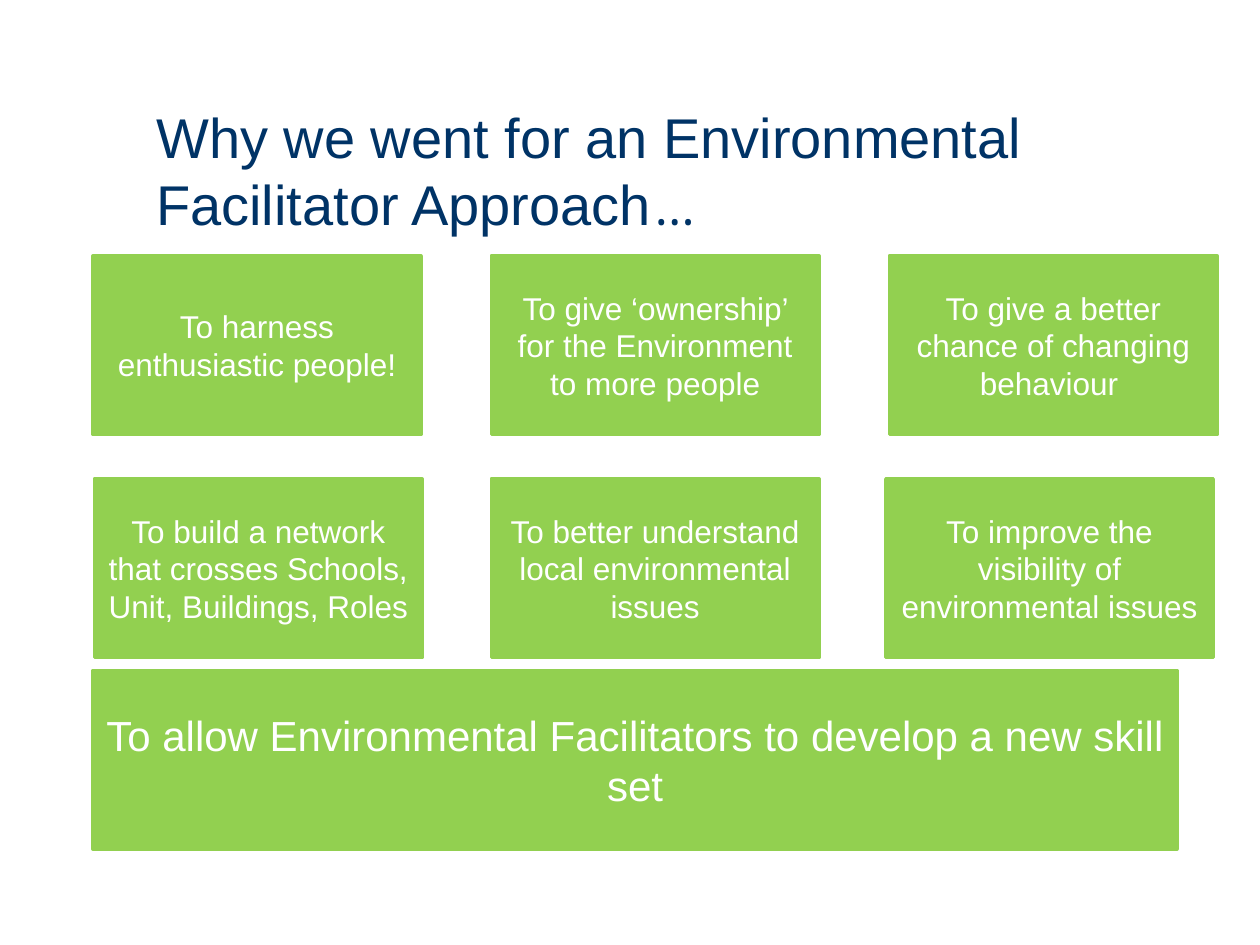
from dataclasses import dataclass

from pptx import Presentation
from pptx.dml.color import RGBColor as RGB
from pptx.enum.shapes import MSO_SHAPE as Shape
from pptx.enum.text import MSO_ANCHOR as Anchor, PP_ALIGN as Align
from pptx.util import Inches, Pt

NAVY = RGB(0x00, 0x33, 0x66)
GREEN = RGB(0x92, 0xD0, 0x50)
WHITE = RGB(0xFF, 0xFF, 0xFF)
HEIGHT = 1.42


@dataclass
class Reason:
    text: str
    left: float
    top: float
    width: float = 2.6
    size: int = 18


REASONS = [
    # Upper row
    Reason("To harness enthusiastic people!", 0.74, 2.03),
    Reason("To give ‘ownership’ for the Environment to more people", 3.9, 2.03),
    Reason("To give a better chance of changing behaviour ", 7.06, 2.03),
    # Lower row
    Reason("To build a network that crosses Schools, Unit, Buildings, Roles", 0.75, 3.8),
    Reason("To better understand local environmental issues", 3.9, 3.8),
    Reason("To improve the visibility of environmental issues", 7.03, 3.8),
    # Wide box
    Reason("To allow Environmental Facilitators to develop a new skill set",
           0.74, 5.32, 8.6, 24),
]


def style(font, name: str, size: int, color: RGB) -> None:
    font.name = name
    font.size = Pt(size)
    font.color.rgb = color


def set_title(title) -> None:
    title.left, title.top = Inches(1.14), Inches(0.76)
    title.width, title.height = Inches(8.74), Inches(1.48)
    frame = title.text_frame
    frame.word_wrap = True
    frame.vertical_anchor = Anchor.TOP
    frame.text = "Why we went for an Environmental Facilitator Approach"
    line = frame.paragraphs[0]
    line.alignment = Align.LEFT
    style(line.runs[0].font, "Arial", 32, NAVY)
    dots = line.add_run()
    dots.text = "…"
    style(dots.font, "Cambria", 32, NAVY)


def add_box(slide, reason: Reason) -> None:
    box = slide.shapes.add_shape(
        Shape.RECTANGLE, Inches(reason.left), Inches(reason.top),
        Inches(reason.width), Inches(HEIGHT))
    box.shadow.inherit = False
    box.fill.solid()
    box.fill.fore_color.rgb = GREEN
    box.line.color.rgb = GREEN
    box.line.width = Pt(2)
    frame = box.text_frame
    frame.word_wrap = True
    frame.vertical_anchor = Anchor.MIDDLE
    frame.text = reason.text
    line = frame.paragraphs[0]
    line.alignment = Align.CENTER
    style(line.runs[0].font, "Arial", reason.size, WHITE)


def main() -> None:
    deck = Presentation()
    deck.slide_width, deck.slide_height = Inches(10), Inches(7.5)
    slide = deck.slides.add_slide(deck.slide_layouts[5])
    set_title(slide.shapes.title)
    for reason in REASONS:
        add_box(slide, reason)
    deck.save("out.pptx")


if __name__ == "__main__":
    main()
